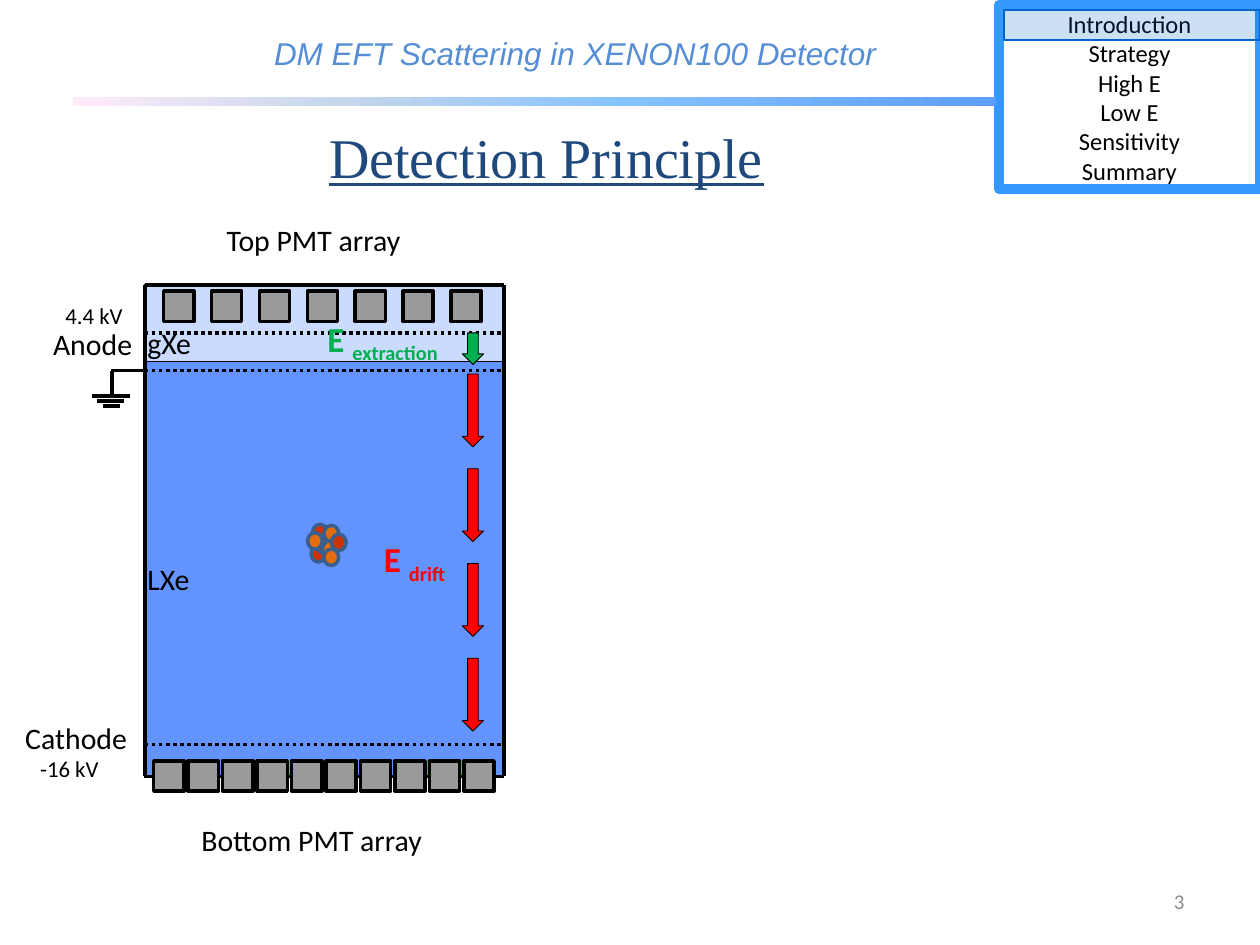
from lxml import etree
from pptx import Presentation
from pptx import util as u
from pptx.dml.color import RGBColor
from pptx.enum import dml, shapes, text
from pptx.oxml import ns

Cm, Pt = u.Cm, u.Pt
rgb = RGBColor.from_string
RECT = shapes.MSO_SHAPE.RECTANGLE
OVAL = shapes.MSO_SHAPE.OVAL
ARROW = shapes.MSO_SHAPE.DOWN_ARROW
TOP, MIDDLE, BOTTOM = text.MSO_ANCHOR.TOP, text.MSO_ANCHOR.MIDDLE, text.MSO_ANCHOR.BOTTOM
LEFT, CENTER, RIGHT = text.PP_ALIGN.LEFT, text.PP_ALIGN.CENTER, text.PP_ALIGN.RIGHT

deck = Presentation()
deck.slide_width, deck.slide_height = Cm(25.4), Cm(19.05)
page = deck.slides.add_slide(deck.slide_layouts[5])


def add_block(kind, x, y, width, height, fill=None, line=None, weight=0.5):
    block = page.shapes.add_shape(kind, Cm(x), Cm(y), Cm(width), Cm(height))
    block.shadow.inherit = False
    if fill:
        block.fill.solid()
        block.fill.fore_color.rgb = rgb(fill)
    else:
        block.fill.background()
    if line:
        block.line.color.rgb = rgb(line)
        block.line.width = Pt(weight)
    else:
        block.line.fill.background()
    return block


def add_label(x, y, width, height, words, size, color="000000", font="Calibri",
              align=LEFT, anchor=TOP, wrap=False, inset=True):
    box = page.shapes.add_textbox(Cm(x), Cm(y), Cm(width), Cm(height))
    frame = box.text_frame
    frame.word_wrap = wrap
    frame.vertical_anchor = anchor
    frame.auto_size = text.MSO_AUTO_SIZE.SHAPE_TO_FIT_TEXT
    if not inset:
        frame.margin_left = frame.margin_right = frame.margin_top = frame.margin_bottom = 0
    para = frame.paragraphs[0]
    para.text = words
    para.alignment = align
    para.font.name, para.font.size = font, Pt(size)
    para.font.color.rgb = rgb(color)
    return para


menu = add_block(RECT, 20.14, 0.1, 5.26, 3.71, None, "3399FF", 6)
menu.text_frame.word_wrap = False
menu.text_frame.vertical_anchor = MIDDLE
menu.text_frame.text = "Introduction\nStrategy\nHigh E\nLow E\nSensitivity\nSummary"
for para in menu.text_frame.paragraphs:
    para.alignment = CENTER
    para.font.name, para.font.size = "Calibri", Pt(14)
    para.font.color.rgb = rgb("000000")

rule = add_block(RECT, 1.47, 1.96, 18.62, 0.18)
rule.fill.gradient()
rule.fill.gradient_angle = 0
stops = rule.fill._fill._gradFill.find(ns.qn("a:gsLst"))
for stop in list(stops):
    stops.remove(stop)
for position, color in ((0, "FFEBFA"), (30, "C4D6EB"), (60, "85C2FF"), (100, "5E9EFF")):
    stop = etree.SubElement(stops, ns.qn("a:gs"), pos=str(position * 1000))
    etree.SubElement(stop, ns.qn("a:srgbClr"), val=color)

header = add_label(3.76, 0.56, 15.67, 1.02, "DM EFT Scattering in XENON100 Detector", 18,
                   "558ED5", "Arial", CENTER, wrap=True)
header.font.italic = True
add_label(18.21, 17.65, 5.92, 1.02, "3", 12, "8C8C8C", align=RIGHT, anchor=MIDDLE, wrap=True)

title = page.shapes.title
title.left, title.top, title.width, title.height = Cm(2.34), Cm(2.34), Cm(17.35), Cm(1.63)
title.text_frame.text = "Detection Principle"
title.text_frame.vertical_anchor = TOP
title.text_frame.auto_size = text.MSO_AUTO_SIZE.SHAPE_TO_FIT_TEXT
para = title.text_frame.paragraphs[0]
para.alignment = CENTER
para.font.name, para.font.size = "Times New Roman", Pt(32)
para.font.underline = True
para.font.color.rgb = rgb("1F497D")

highlight = add_block(RECT, 20.24, 0.2, 5.16, 0.61, "0066CC", "0066CC", 0.75)
tint = highlight._element.spPr.find(ns.qn("a:solidFill"))[0]
etree.SubElement(tint, ns.qn("a:alpha"), val="20000")

left, right, top, bottom = 2.92, 10.16, 5.74, 15.65
add_block(RECT, left, top, right - left, 1.65, "CADBFE", "000000")
add_block(RECT, left, 7.29, right - left, 8.38, "6293FE", "000000")

walls = [(left, top, left, bottom), (right, top, right, bottom),
         (left, top, right, top), (left, bottom, right, bottom)]
grids = [(left, y, right, y) for y in (6.71, 7.47, 15.01)]
ground = [(2.24, 7.47, 2.95, 7.47), (2.26, 7.98, 2.26, 7.47), (1.85, 7.98, 2.62, 7.98),
          (1.96, 8.08, 2.51, 8.08), (2.08, 8.18, 2.41, 8.18)]
for ends in walls + grids + ground:
    wire = page.shapes.add_connector(shapes.MSO_CONNECTOR.STRAIGHT, *map(Cm, ends))
    wire.line.color.rgb = rgb("000000")
    wire.line.width = Pt(2)
    if ends in grids:
        wire.line.dash_style = dml.MSO_LINE.ROUND_DOT
    etree.SubElement(wire._element.spPr, ns.qn("a:effectLst"))

top_tubes = [(3.3 + 5.79 * i / 6, 5.87) for i in range(7)]
bottom_tubes = [(3.1 + 6.25 * i / 9, 15.34) for i in range(10)]
for x, y in top_tubes + bottom_tubes:
    add_block(RECT, x, y, 0.61, 0.61, "9A9A9A", "000000", 2)

for x, y, width, words, size in (
    (1.07, 6.55, 1.6, "Anode", 17),
    (0.51, 14.5, 2.06, "Cathode", 17),
    (4.57, 4.45, 3.53, "Top PMT array", 17),
    (4.06, 16.54, 4.5, "Bottom PMT array", 17),
    (0.81, 15.21, 1.19, "-16 kV", 13),
    (1.32, 6.07, 1.17, "4.4 kV", 13),
    (2.97, 11.28, 0.86, "LXe", 17),
    (2.97, 6.53, 0.89, "gXe", 17),
):
    add_label(x, y, width, 0.74 if size == 17 else 0.56, words, size, anchor=BOTTOM, inset=False)

for x, y, width, name, color in ((7.49, 10.72, 1.88, "drift", "FF0000"),
                                 (6.35, 6.27, 3.02, "extraction", "00B050")):
    field = add_label(x, y, width, 1.12, "E ", 20, color)
    field.font.bold = True
    span = field.add_run()
    span.text = name
    span._r.get_or_add_rPr().set("baseline", "-25000")

add_block(ARROW, 9.32, 6.71, 0.43, 0.64, "00B050", "000000")
for i in range(4):
    add_block(ARROW, 9.32, 7.54 + 1.91 * i, 0.43, 1.47, "FF0000", "000000")

PROTON, NEUTRON = "CC3300", "E46C0A"
for x, y, color in ((6.27, 11, PROTON), (6.38, 10.82, PROTON), (6.3, 10.57, PROTON),
                    (6.2, 10.74, NEUTRON), (6.5, 10.9, NEUTRON), (6.53, 10.59, NEUTRON),
                    (6.68, 10.77, PROTON), (6.53, 11.07, NEUTRON)):
    add_block(OVAL, x, y, 0.3, 0.33, color, "3A5F8C", 2)

deck.save("out.pptx")
